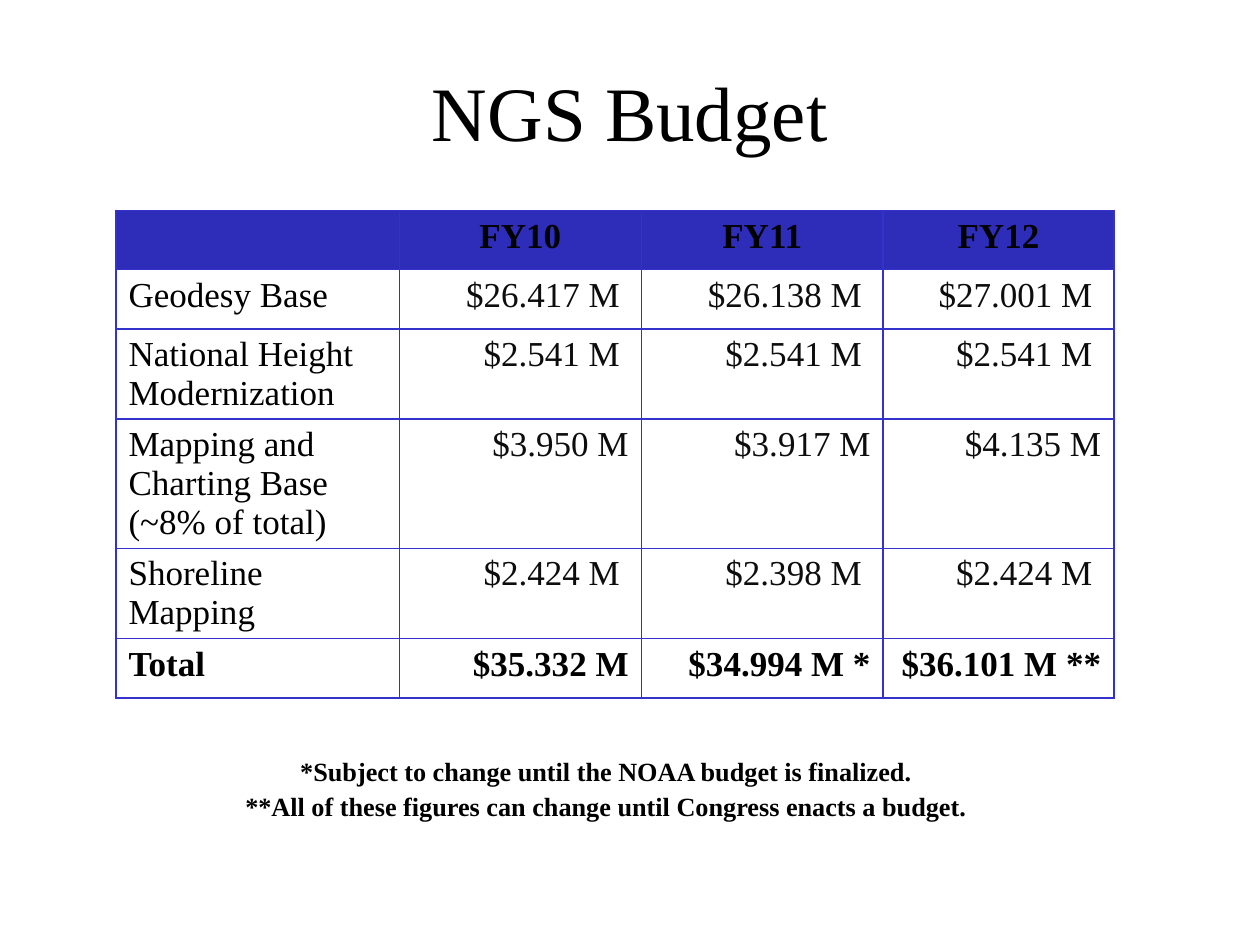
import pptx
import pptx.util
import pptx.dml.color
import pptx.enum.text
import pptx.oxml
import pptx.oxml.ns

Inches, Pt = pptx.util.Inches, pptx.util.Pt
RGBColor = pptx.dml.color.RGBColor
ALIGN = pptx.enum.text.PP_ALIGN
ANCHOR = pptx.enum.text.MSO_ANCHOR

# Content
TITLE = "NGS Budget"
HEADER = ["", "FY10", "FY11", "FY12"]
ROWS = [
    ["Geodesy Base", "$26.417 M", "$26.138 M", "$27.001 M"],
    ["National Height Modernization", "$2.541 M", "$2.541 M", "$2.541 M"],
    ["Mapping and Charting Base (~8% of total)", "$3.950 M", "$3.917 M", "$4.135 M"],
    ["Shoreline Mapping", "$2.424 M", "$2.398 M", "$2.424 M"],
    ["Total", "$35.332 M", "$34.994 M *", "$36.101 M **"],
]
NOTES = [
    "*Subject to change until the NOAA budget is finalized.",
    "**All of these figures can change until Congress enacts a budget.",
]

# Style and grid, in inches
FONT = "Times New Roman"
BLACK = RGBColor(0x00, 0x00, 0x00)
INK = RGBColor(0x0D, 0x0D, 0x0D)
HEADER_FILL = RGBColor(0x2D, 0x2D, 0xB9)
BORDER = RGBColor(0x33, 0x33, 0xCC)
COLS = [2.25, 1.92, 1.92, 1.83]
HEIGHTS = [0.47, 0.47, 0.71, 1.02, 0.71, 0.47]
INSET = 0.1
WIDE_INSET = 0.17
WIDE_ROWS = (1, 2, 4)  # rows whose amounts sit further from the right edge


def write(p, text, size=20, color=BLACK, bold=False, align=ALIGN.LEFT):
    p.alignment = align
    r = p.add_run()
    r.text = text
    r.font.name = FONT
    r.font.size = Pt(size)
    r.font.bold = bold
    r.font.color.rgb = color


def add_borders(cell):
    tcPr = cell._tc.get_or_add_tcPr()
    for i, side in enumerate(("lnL", "lnR", "lnT", "lnB")):
        tcPr.insert(i, pptx.oxml.parse_xml(
            f'<a:{side} {pptx.oxml.ns.nsdecls("a")} w="{Pt(1)}"><a:solidFill>'
            f'<a:srgbClr val="{BORDER}"/></a:solidFill></a:{side}>'))


prs = pptx.Presentation()
prs.slide_width, prs.slide_height = Inches(10), Inches(7.5)
s = prs.slides.add_slide(prs.slide_layouts[5])

# Title
title = s.shapes.title
title.left, title.top = Inches(0.75), Inches(0.25)
title.width, title.height = Inches(8.5), Inches(1.25)
title.text_frame.vertical_anchor = ANCHOR.MIDDLE
write(title.text_frame.paragraphs[0], TITLE, size=44, align=ALIGN.CENTER)

# Budget table
grid = [HEADER] + ROWS
table = s.shapes.add_table(len(grid), len(COLS), Inches(0.92), Inches(1.67),
                           Inches(sum(COLS)), Inches(sum(HEIGHTS))).table
table.horz_banding = False
for col, width in zip(table.columns, COLS):
    col.width = Inches(width)
for row, height in zip(table.rows, HEIGHTS):
    row.height = Inches(height)

for i, values in enumerate(grid):
    is_header, is_total = i == 0, i == len(grid) - 1
    for j, value in enumerate(values):
        cell = table.cell(i, j)
        is_amount = j > 0 and not is_header
        if is_header:
            cell.fill.solid()
            cell.fill.fore_color.rgb = HEADER_FILL
        else:
            cell.fill.background()
        add_borders(cell)
        cell.margin_left = Inches(INSET)
        cell.margin_right = Inches(WIDE_INSET if is_amount and i in WIDE_ROWS else INSET)
        align = ALIGN.CENTER if is_header else ALIGN.RIGHT if is_amount else ALIGN.LEFT
        write(cell.text_frame.paragraphs[0], value, align=align,
              color=INK if is_amount and not is_total else BLACK,
              bold=is_header or is_total)

# Footnotes
tf = s.shapes.add_textbox(Inches(1.02), Inches(5.92), Inches(7.58), Inches(0.86)).text_frame
tf.word_wrap = True
for i, note in enumerate(NOTES):
    p = tf.add_paragraph() if i else tf.paragraphs[0]
    p.line_spacing = 1.1
    write(p, note, size=15, bold=True, align=ALIGN.CENTER)

prs.save("out.pptx")
